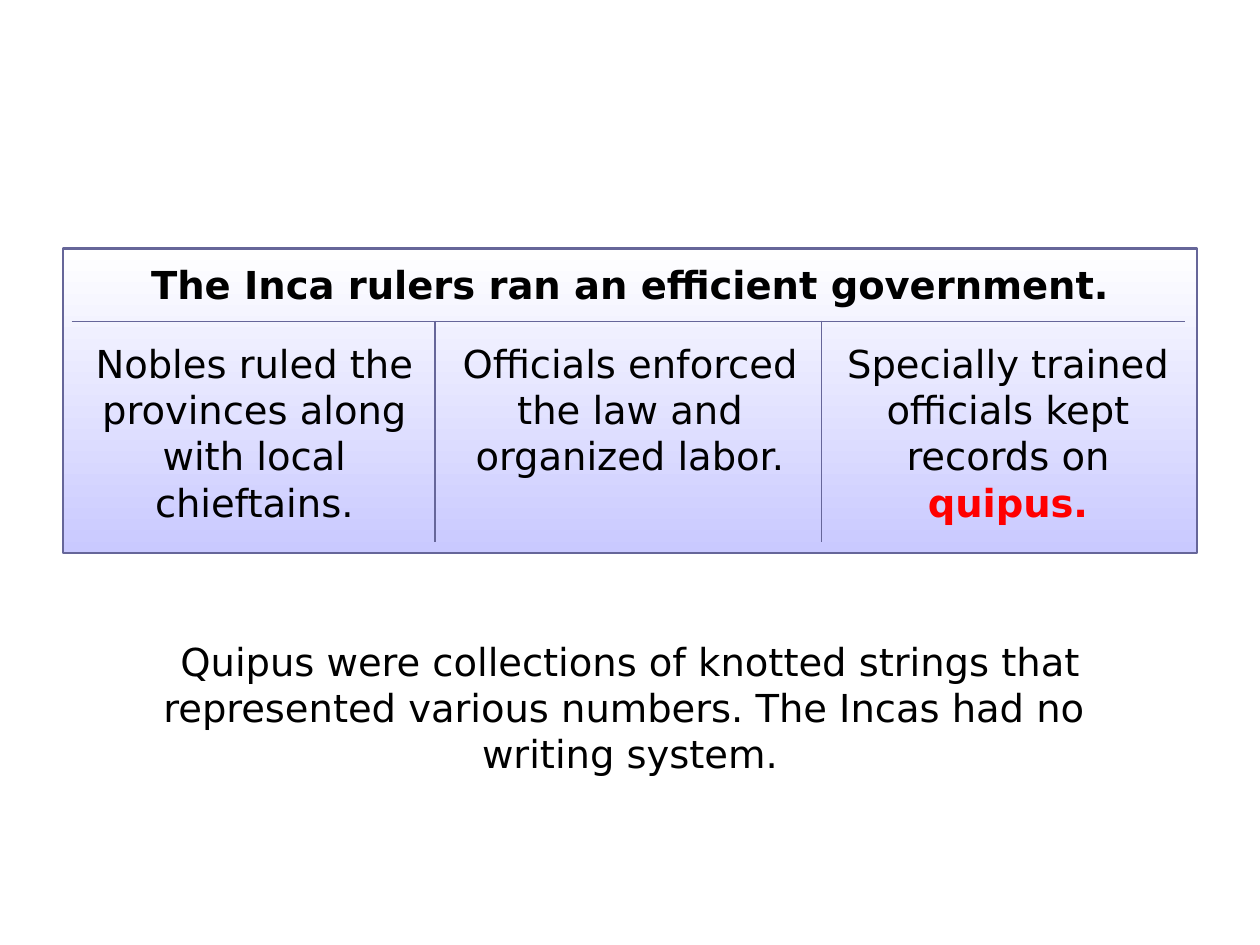
"""Build a slide on how the Inca rulers governed."""
from typing import NamedTuple

from lxml import etree
from pptx import Presentation
from pptx import util as u
from pptx.dml import color as clr
from pptx.enum import shapes, text
from pptx.oxml import ns

HUES = {"ink": "000000", "key": "FF0000", "edge": "666699", "top": "FFFFFF", "base": "C9C9FF"}
FONT = "DejaVu Sans"
SIZE = 22


class Run(NamedTuple):
    words: str
    hue: str = "ink"
    bold: bool = False


class Box(NamedTuple):
    left: float
    top: float
    width: float
    height: float


class Note(NamedTuple):
    box: Box
    lines: list[list[Run]]


PANEL = Box(36, 142, 648, 174)
GRID = Box(41, 148.2, 636, 161.4)
COLS = (207.5, 221, 207.5)
ROWS = (35.4, 126)
TOP = 190.8
NOTES = [
    Note(Box(36, 360.8, 648, 86.4), [
        [Run("Quipus were collections of knotted strings that represented various numbers. "
             "The Incas had no ")],
        [Run("writing system.")]]),
    Note(Box(44.8, TOP, 201, 113), [[Run("Nobles ruled the provinces along with local chieftains.")]]),
    Note(Box(252, TOP, 216, 86.4), [[Run("Officials enforced the law and organized labor.")]]),
    Note(Box(468, TOP, 216, 113), [[Run("Specially trained officials kept records on "),
                                    Run("quipus.", "key", True)]]),
    Note(Box(66, 145.6, 588, 33.8), [[Run("The Inca rulers ran an efficient government.", bold=True)]]),
]


def rgb(hue: str) -> clr.RGBColor:
    """Look up a colour by name."""
    return clr.RGBColor.from_string(HUES[hue])


def place(box: Box) -> list[u.Length]:
    """Turn a box into lengths."""
    return [u.Pt(side) for side in box]


def panel(slide) -> None:
    """Draw the shaded panel behind the table."""
    shape = slide.shapes.add_shape(shapes.MSO_SHAPE.RECTANGLE, *place(PANEL))
    shape.shadow.inherit = False
    shape.fill.gradient()
    shape.fill.gradient_angle = 270
    for stop, hue in zip(shape.fill.gradient_stops, ("top", "base")):
        stop.color.rgb = rgb(hue)
        stop.position = float(hue == "base")
    shape.line.color.rgb = rgb("edge")
    shape.line.width = u.Pt(1.5)


def border(cell, sides: str) -> None:
    """Rule the named sides of a cell and clear the others."""
    props = cell._tc.get_or_add_tcPr()
    for spot, side in enumerate("LRTB"):
        line = etree.Element(ns.qn(f"a:ln{side}"), w=str(u.Pt(1)))
        if side in sides:
            fill = etree.SubElement(line, ns.qn("a:solidFill"))
            etree.SubElement(fill, ns.qn("a:srgbClr"), val=HUES["edge"])
        else:
            etree.SubElement(line, ns.qn("a:noFill"))
        props.insert(spot, line)


def grid(slide) -> None:
    """Draw the table that divides the panel."""
    table = slide.shapes.add_table(len(ROWS), len(COLS), *place(GRID)).table
    table.first_row = table.horz_banding = False
    for col, width in zip(table.columns, COLS):
        col.width = u.Pt(width)
    for row, height in zip(table.rows, ROWS):
        row.height = u.Pt(height)
    table.cell(0, 0).merge(table.cell(0, len(COLS) - 1))
    for row, edges in enumerate((("B", "B", "B"), ("TR", "TLR", "TL"))):
        for col, sides in enumerate(edges):
            cell = table.cell(row, col)
            cell.fill.background()
            border(cell, sides)


def write(slide, note: Note) -> None:
    """Add a centred text box."""
    frame = slide.shapes.add_textbox(*place(note.box)).text_frame
    frame.word_wrap = True
    para = frame.paragraphs[0]
    para.alignment = text.PP_ALIGN.CENTER
    for row, line in enumerate(note.lines):
        if row:
            para.add_line_break()
        for part in line:
            run = para.add_run()
            run.text = part.words
            run.font.name = FONT
            run.font.size = u.Pt(SIZE)
            run.font.bold = part.bold
            run.font.color.rgb = rgb(part.hue)


def main() -> None:
    """Build and save the slide."""
    deck = Presentation()
    deck.slide_width, deck.slide_height = u.Pt(720), u.Pt(540)
    slide = deck.slides.add_slide(deck.slide_layouts[6])
    panel(slide)
    grid(slide)
    for note in NOTES:
        write(slide, note)
    deck.save("out.pptx")


if __name__ == "__main__":
    main()
